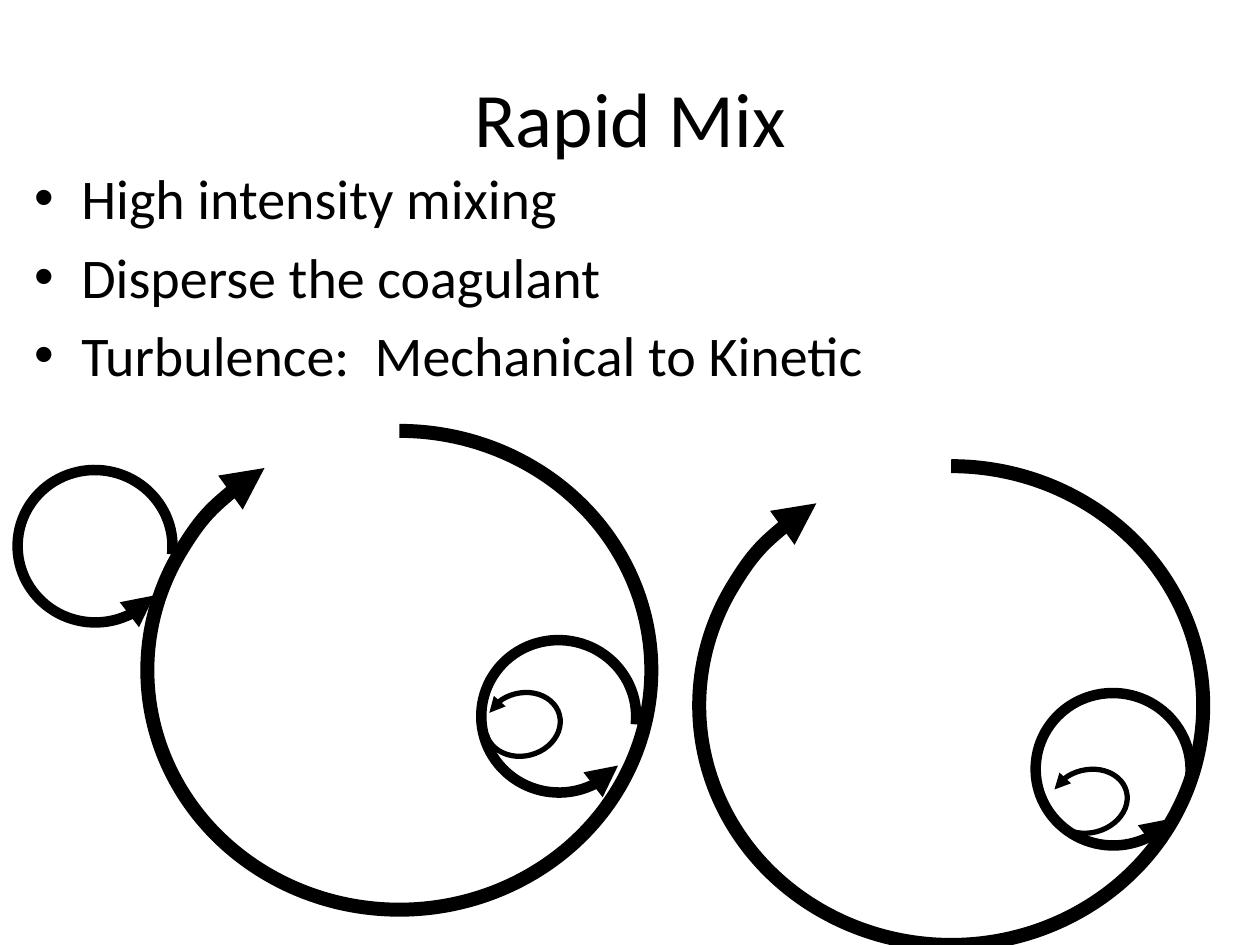
from pptx import Presentation
from pptx import util as u
from pptx.dml import color
from pptx.enum import shapes, text
from pptx.oxml import ns, xmlchemy

COLORS = {"ink": "000000", "paper": "FFFFFF"}
FONT = "Calibri"
POINTS = ["High intensity mixing", "Disperse the coagulant",
          "Turbulence:  Mechanical to Kinetic"]

# Arc angles: start and end in units of 100000/60000 degrees
START, END = 162, 141.786

# Left and top of each swirl
LARGE = [(1.17, 3.42), (5.55, 3.7)]
MEDIUM = [(0.15, 3.72), (3.83, 5.07), (8.23, 5.49)]
SMALL = [(8.39, 6.05, 0.62), (3.9, 5.45, 0.6)]  # also height


def rgb(name):
    return color.RGBColor.from_string(COLORS[name])


def place(shape, left, top, width, height):
    shape.left, shape.top = u.Inches(left), u.Inches(top)
    shape.width, shape.height = u.Inches(width), u.Inches(height)


def style(frame, size, align):
    frame.word_wrap = True
    frame.auto_size = text.MSO_AUTO_SIZE.NONE
    for para in frame.paragraphs:
        para.alignment = align
        for run in para.runs:
            run.font.name = FONT
            run.font.size = u.Pt(size)
            run.font.color.rgb = rgb("ink")


def add_title(slide):
    title = slide.shapes.title
    place(title, 0.5, 0.3, 9, 1.25)
    title.text_frame.text = "Rapid Mix"
    title.text_frame.vertical_anchor = text.MSO_ANCHOR.MIDDLE
    style(title.text_frame, 44, text.PP_ALIGN.CENTER)


def add_list(slide):
    body = slide.placeholders[1]
    place(body, 0.17, 1.25, 9, 4.95)
    body.text_frame.text = "\n".join(POINTS)
    body.text_frame.paragraphs[0].space_before = u.Pt(0)
    style(body.text_frame, 32, text.PP_ALIGN.LEFT)


def add_swirl(slide, left, top, width, height, weight, turn=0, flip=False):
    arc = slide.shapes.add_shape(
        shapes.MSO_SHAPE.ARC, u.Inches(left), u.Inches(top),
        u.Inches(width), u.Inches(height))
    arc.adjustments[0], arc.adjustments[1] = START, END
    arc.rotation = turn
    arc.shadow.inherit = False
    arc.fill.background()
    arc.line.color.rgb = rgb("ink")
    arc.line.width = u.Pt(weight)
    if flip:
        arc._element.spPr.find(ns.qn("a:xfrm")).set("flipH", "1")
    # Arrowhead at the end of the arc
    tail = xmlchemy.OxmlElement("a:tailEnd")
    tail.set("type", "triangle")
    arc.line._get_or_add_ln().append(tail)


def main():
    deck = Presentation()
    deck.slide_width, deck.slide_height = u.Inches(10), u.Inches(7.5)
    slide = deck.slides.add_slide(deck.slide_layouts[1])
    slide.background.fill.solid()
    slide.background.fill.fore_color.rgb = rgb("paper")

    # Text
    add_title(slide)
    add_list(slide)

    # Eddies, from large to small
    for left, top in LARGE:
        add_swirl(slide, left, top, 4, 3.8, 8)
    for left, top in MEDIUM:
        add_swirl(slide, left, top, 1.21, 1.23, 6, turn=96, flip=True)
    for left, top, height in SMALL:
        add_swirl(slide, left, top, 0.5, height, 3, turn=255.3, flip=True)

    deck.save("out.pptx")


if __name__ == "__main__":
    main()
